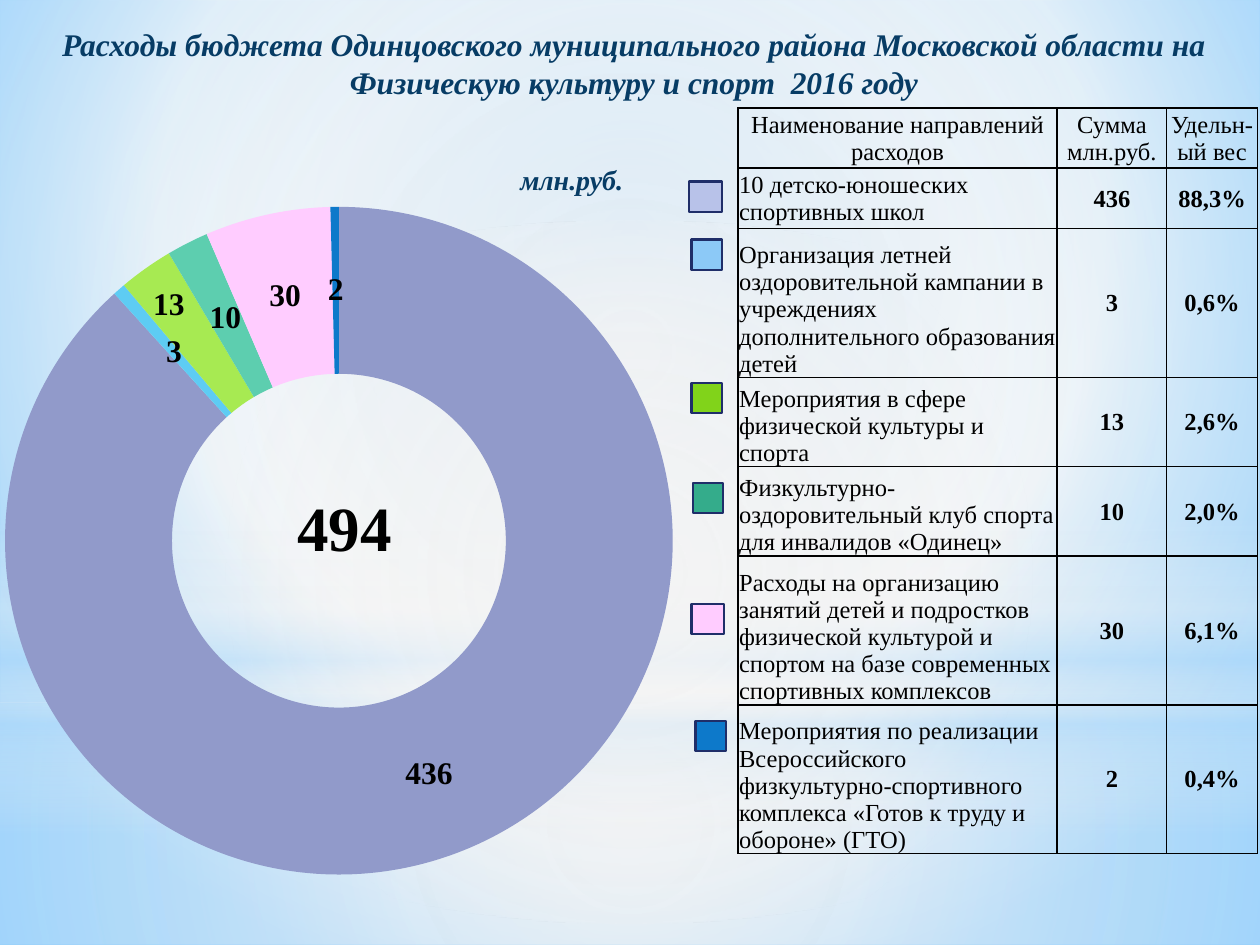
import pptx
import pptx.chart.data
import pptx.dml.color
import pptx.enum.chart
import pptx.enum.shapes
import pptx.enum.text
import pptx.oxml
import pptx.oxml.ns
import pptx.util

Cm = pptx.util.Cm
Pt = pptx.util.Pt
RGB = pptx.dml.color.RGBColor.from_string
Align = pptx.enum.text.PP_ALIGN
Anchor = pptx.enum.text.MSO_ANCHOR
Shape = pptx.enum.shapes.MSO_SHAPE
qn = pptx.oxml.ns.qn

FONT = "Times New Roman"
COLORS = {
    "text": "000000", "title": "073C65", "swatch line": "1F2E69",
    "sky": "9ED5FF", "deep sky": "5BB9FF", "white": "FFFFFF",
    "mist": "F4F4F4", "haze": "B4DCFA",
}
HEADERS = ["Наименование направлений расходов", "Сумма млн.руб.", "Удельн-ый вес"]
EXPENSES = [
    ("10 детско-юношеских спортивных школ", 436, "88,3%", "919ACA"),
    ("Организация летней оздоровительной кампании в учреждениях дополнительного образования детей",
     3, "0,6%", "5ECCF3"),
    ("Мероприятия в сфере физической культуры и спорта", 13, "2,6%", "A7EA52"),
    ("Физкультурно-оздоровительный клуб спорта для инвалидов «Одинец»", 10, "2,0%", "5DCEAF"),
    ("Расходы на организацию занятий детей и подростков физической культурой и спортом "
     "на базе современных спортивных комплексов", 30, "6,1%", "FFCCFF"),
    ("Мероприятия по реализации Всероссийского физкультурно-спортивного комплекса "
     "«Готов к труду и обороне» (ГТО)", 2, "0,4%", "0D79CA"),
]


def add_run(paragraph, text, size, color="text", bold=False, italic=False):
    run = paragraph.add_run()
    run.text = text
    run.font.name = FONT
    run.font.size = Pt(size)
    run.font.bold = bold
    run.font.italic = italic
    run.font.color.rgb = RGB(COLORS[color])


def set_gradient(properties, stops, focus=None):
    stop_xml = "".join(
        f'<a:gs pos="{position * 1000}"><a:srgbClr val="{COLORS[color]}">'
        f'<a:alpha val="{alpha * 1000}"/></a:srgbClr></a:gs>'
        for position, color, alpha in stops)
    if focus:
        left, top, right, bottom = [value * 1000 for value in focus]
        direction = (f'<a:path path="circle"><a:fillToRect l="{left}" t="{top}" '
                     f'r="{right}" b="{bottom}"/></a:path>')
    else:
        direction = '<a:lin ang="5400000" scaled="0"/>'
    gradient = pptx.oxml.parse_xml(
        f'<a:gradFill {pptx.oxml.ns.nsdecls("a")} rotWithShape="1">'
        f'<a:gsLst>{stop_xml}</a:gsLst>{direction}</a:gradFill>')
    properties.replace(properties.find(qn("a:noFill")), gradient)


presentation = pptx.Presentation()
presentation.slide_width = Cm(25.4)
presentation.slide_height = Cm(19.05)
slide = presentation.slides.add_slide(presentation.slide_layouts[5])

slide.background.fill.background()
set_gradient(slide.element.find(".//" + qn("p:bgPr")),
             [(0, "sky", 100), (60, "white", 100), (100, "deep sky", 100)], (20, 10, 20, 60))

center = (50, 50, 50, 50)
glows = [
    (Shape.RECTANGLE, 14.17, 4.88, [(0, "mist", 91), (37, "mist", 76), (100, "haze", 79)], center),
    (Shape.RECTANGLE, 0, 14.17, [(0, "mist", 89), (48, "mist", 62), (100, "haze", 79)], center),
    (Shape.RECTANGLE, 10.46, 6.35, [(0, "mist", 0), (29, "mist", 30), (45, "haze", 40),
                                    (55, "mist", 26), (65, "haze", 60), (100, "mist", 0)], None),
    (Shape.OVAL, 4.45, 14.17, [(0, "mist", 100), (56, "mist", 0)], center),
]
for kind, top, height, stops, focus in glows:
    glow = slide.shapes.add_shape(kind, 0, Cm(top), Cm(25.4), Cm(height))
    glow.shadow.inherit = False
    glow.line.fill.background()
    glow.fill.background()
    set_gradient(glow.element.spPr, stops, focus)

chart_data = pptx.chart.data.CategoryChartData()
chart_data.categories = [str(number) for number in range(1, len(EXPENSES) + 1)]
chart_data.add_series("Series 1", [amount for _, amount, _, _ in EXPENSES])
chart = slide.shapes.add_chart(pptx.enum.chart.XL_CHART_TYPE.DOUGHNUT,
                               0, Cm(3.12), Cm(25.4), Cm(15.93), chart_data).chart
chart.has_title = False
chart.has_legend = False
chart.font.name = "Lato"
chart.font.size = Pt(10)
chart.font.color.rgb = RGB(COLORS["text"])
plot = chart.plots[0]
plot.vary_by_categories = True
plot.has_data_labels = True
for index, (_, _, _, color) in enumerate(EXPENSES):
    point = plot.series[0].points[index]
    point.format.fill.solid()
    point.format.fill.fore_color.rgb = RGB(color)
    point.format.line.fill.background()

labels = plot.series[0].data_labels
labels.show_value = True
labels.show_percentage = False
labels.show_category_name = False
labels.show_legend_key = False
labels.show_leader_lines = False
labels.font.name = FONT
labels.font.size = Pt(18)
labels.font.bold = True
labels.font.color.rgb = RGB(COLORS["text"])
label_font = plot.series[0].points[2].data_label.font
label_font.name = FONT
label_font.size = Pt(18)
label_font.bold = True
label_font.color.rgb = RGB(COLORS["text"])
chart_ns = pptx.oxml.ns.nsdecls("c")
moved_label = chart.element.find(".//" + qn("c:dLbl"))
for tag in ("c:showCatName", "c:showPercent", "c:showLegendKey", "c:showSerName"):
    moved_label.find(qn(tag)).set("val", "0")
moved_label.find(qn("c:showVal")).set("val", "1")
moved_label.insert(1, pptx.oxml.parse_xml(
    f'<c:layout {chart_ns}><c:manualLayout><c:x val="-0.02"/><c:y val="-0.04"/>'
    '</c:manualLayout></c:layout>'))

plot_area = chart.element.find(".//" + qn("c:plotArea"))
for layout in plot_area.findall(qn("c:layout")):
    plot_area.remove(layout)
plot_area.insert(0, pptx.oxml.parse_xml(
    f'<c:layout {chart_ns}><c:manualLayout><c:layoutTarget val="inner"/>'
    '<c:xMode val="edge"/><c:yMode val="edge"/><c:x val="0.004"/><c:y val="0.066"/>'
    '<c:w val="0.53"/><c:h val="0.845"/></c:manualLayout></c:layout>'))
plot_area.find(".//" + qn("c:holeSize")).set("val", "33")

total = slide.shapes.add_textbox(Cm(3.71), Cm(8.97), Cm(6.48), Cm(3.28)).text_frame
total.word_wrap = True
total.vertical_anchor = Anchor.MIDDLE
total.paragraphs[0].alignment = Align.CENTER
add_run(total.paragraphs[0], "494", 36, bold=True)

unit = slide.shapes.add_textbox(Cm(10.24), Cm(3.15), Cm(2.82), Cm(1.02)).text_frame
unit.word_wrap = False
add_run(unit.paragraphs[0], "млн.руб.", 16, "title", True, True)

row_heights = [1.19, 1.22, 3, 1.8, 1.78, 3, 3]
column_widths = [6.43, 2.21, 1.83]
table = slide.shapes.add_table(len(row_heights), len(column_widths), Cm(14.88), Cm(2.18),
                               Cm(sum(column_widths)), Cm(sum(row_heights))).table
table.first_row = False
table.horz_banding = False
for column, width in zip(table.columns, column_widths):
    column.width = Cm(width)
for row, height in zip(table.rows, row_heights):
    row.height = Cm(height)

rows = [HEADERS] + [[name, str(amount), share] for name, amount, share, _ in EXPENSES]
for row_index, texts in enumerate(rows):
    for column_index, text in enumerate(texts):
        cell = table.cell(row_index, column_index)
        is_name = row_index > 0 and column_index == 0
        cell.fill.background()
        cell.margin_left = cell.margin_right = cell.margin_top = Cm(0.02)
        cell.margin_bottom = 0
        cell.vertical_anchor = Anchor.BOTTOM if is_name and row_index > 1 else Anchor.MIDDLE
        paragraph = cell.text_frame.paragraphs[0]
        paragraph.alignment = Align.LEFT if is_name else Align.CENTER
        add_run(paragraph, text, 14, bold=row_index > 0 and column_index > 0)
        for position, side in enumerate("LRTB"):
            cell._tc.tcPr.insert(position, pptx.oxml.parse_xml(
                f'<a:ln{side} {pptx.oxml.ns.nsdecls("a")} w="12700"><a:solidFill>'
                f'<a:srgbClr val="{COLORS["text"]}"/></a:solidFill></a:ln{side}>'))

swatches = [
    (13.89, 3.66, 0.66, "B8C2E9"), (13.94, 4.83, 0.61, "8CC9F7"),
    (13.94, 7.72, 0.61, "81D31A"), (13.97, 9.73, 0.61, "34AC8B"),
    (13.94, 12.17, 0.66, "FFCCFF"), (14.02, 14.53, 0.61, "0D79CA"),
]
for left, top, width, color in swatches:
    swatch = slide.shapes.add_shape(Shape.RECTANGLE, Cm(left), Cm(top), Cm(width), Cm(0.61))
    swatch.shadow.inherit = False
    swatch.fill.solid()
    swatch.fill.fore_color.rgb = RGB(color)
    swatch.line.color.rgb = RGB(COLORS["swatch line"])
    swatch.line.width = Pt(1.25)

title = slide.shapes.title
title.left, title.top, title.width, title.height = Cm(0.08), Cm(0.38), Cm(25.4), Cm(1.8)
title.text_frame.word_wrap = True
title.text_frame.vertical_anchor = Anchor.TOP
title_lines = ["Расходы бюджета Одинцовского муниципального района Московской области на",
               "Физическую культуру и спорт  2016 году"]
for index, line in enumerate(title_lines):
    paragraph = title.text_frame.add_paragraph() if index else title.text_frame.paragraphs[0]
    paragraph.alignment = Align.CENTER
    paragraph.space_before = Pt(0)
    add_run(paragraph, line, 18, "title", True, True)
slide.shapes.element.append(title.element)

presentation.save("out.pptx")
